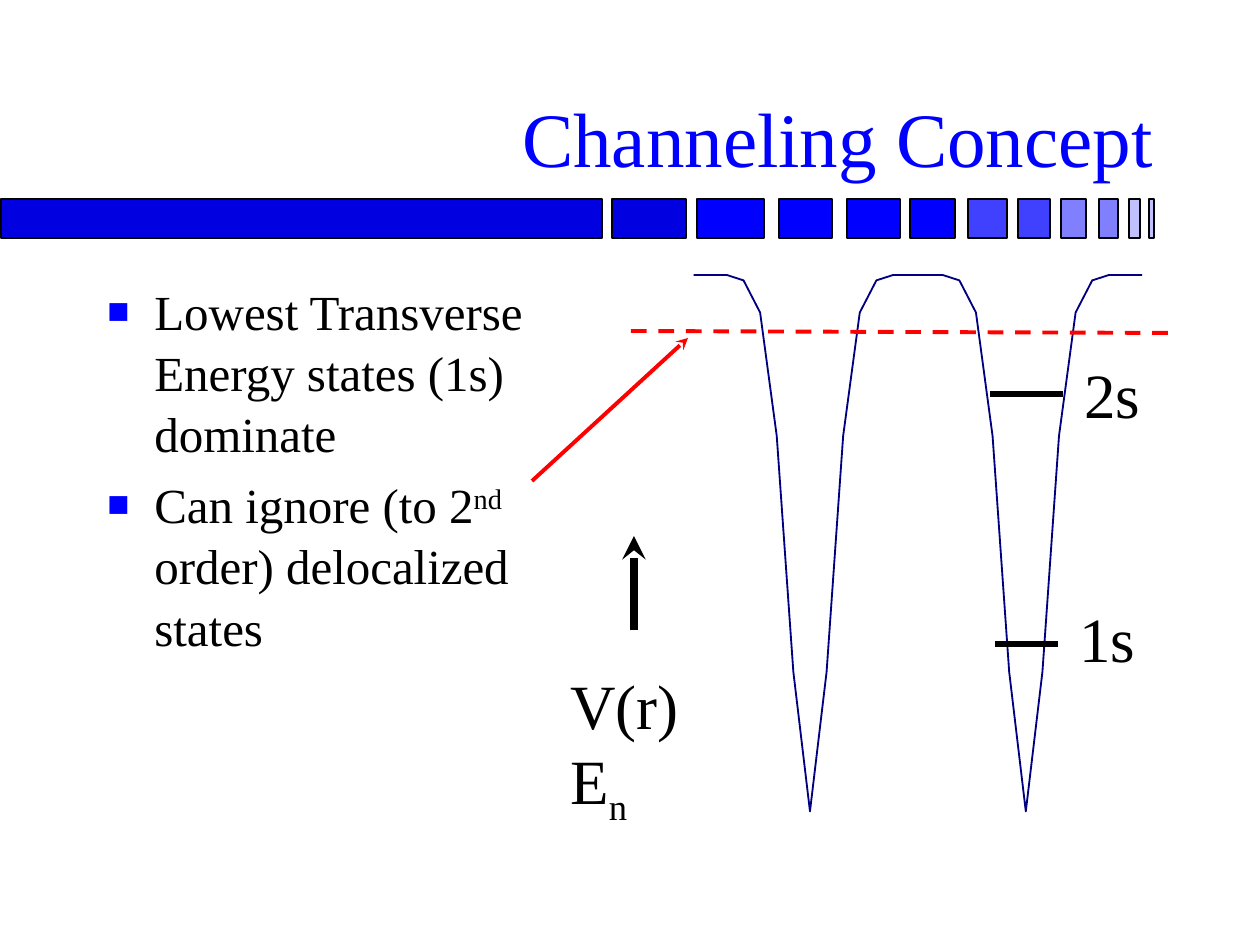
from dataclasses import dataclass

from lxml import etree
from pptx import Presentation
from pptx.chart.data import XyChartData
from pptx.dml.color import RGBColor
from pptx.enum.chart import XL_CHART_TYPE
from pptx.enum.dml import MSO_LINE
from pptx.enum.shapes import MSO_CONNECTOR, MSO_SHAPE
from pptx.enum.text import MSO_ANCHOR, PP_ALIGN
from pptx.oxml.ns import qn
from pptx.util import Emu, Pt

RECTANGLE = MSO_SHAPE.RECTANGLE
STRAIGHT = MSO_CONNECTOR.STRAIGHT
SMOOTH_SCATTER = XL_CHART_TYPE.XY_SCATTER_SMOOTH_NO_MARKERS
DASH = MSO_LINE.DASH
TOP, BOTTOM = MSO_ANCHOR.TOP, MSO_ANCHOR.BOTTOM
LEFT, RIGHT = PP_ALIGN.LEFT, PP_ALIGN.RIGHT
PX = 914400 / 126


@dataclass(frozen=True)
class Theme:
    font: str = "Times New Roman"
    chart_font: str = "Arial"
    title_size: int = 44
    label_size: int = 36
    body_size: int = 28
    chart_size: float = 12.7
    ink: str = "000000"
    accent: str = "0000FF"
    warning: str = "FF0000"
    curve: str = "000080"
    bar_tones: tuple = ("0000E0", "0000FF", "4040FF", "8080FF", "C0C0FF")


def px(value):
    return Emu(round(value * PX))


def rgb(value):
    return RGBColor.from_string(value)


class SlideBuilder:
    def __init__(self, page, theme):
        self.page = page
        self.theme = theme

    def bar(self, left, top, width, height, color):
        box = self.page.shapes.add_shape(RECTANGLE, px(left), px(top), px(width), px(height))
        box.shadow.inherit = False
        box.fill.solid()
        box.fill.fore_color.rgb = rgb(color)
        box.line.color.rgb = rgb(self.theme.ink)
        box.line.width = Pt(1)

    def text(self, left, top, width, height, paragraphs, size, color,
             align=LEFT, anchor=TOP, bullets=False, spacing=None):
        box = self.page.shapes.add_textbox(px(left), px(top), px(width), px(height))
        frame = box.text_frame
        frame.word_wrap = True
        frame.vertical_anchor = anchor
        for index, spans in enumerate(paragraphs):
            para = frame.add_paragraph() if index else frame.paragraphs[0]
            para.alignment = align
            if spacing:
                para.line_spacing = spacing
            if index:
                para.space_before = Pt(size * 0.2)
            if bullets:
                self.bullet(para)
            for words, baseline in spans:
                span = para.add_run()
                span.text = words
                span.font.name = self.theme.font
                span.font.size = Pt(size)
                span.font.color.rgb = rgb(color)
                if baseline:
                    span._r.get_or_add_rPr().set("baseline", str(baseline * 1000))

    def bullet(self, para):
        properties = para._p.get_or_add_pPr()
        properties.set("marL", str(px(47)))
        properties.set("indent", str(-px(47)))
        color = etree.SubElement(properties, qn("a:buClr"))
        etree.SubElement(color, qn("a:srgbClr"), val=self.theme.accent)
        etree.SubElement(properties, qn("a:buSzPct"), val="75000")
        etree.SubElement(properties, qn("a:buFont"), typeface=self.theme.chart_font)
        etree.SubElement(properties, qn("a:buChar"), char="■")

    def line(self, start, end, color, weight, dash=None, arrow=False):
        connector = self.page.shapes.add_connector(
            STRAIGHT, *(px(value) for value in (*start, *end)))
        connector.line.color.rgb = rgb(color)
        connector.line.width = Pt(weight)
        if dash:
            connector.line.dash_style = dash
        if arrow:
            etree.SubElement(connector.line._get_or_add_ln(), qn("a:tailEnd"), type="stealth")
        etree.SubElement(connector._element.spPr, qn("a:effectLst"))

    def curve(self, left, top, width, height, points, x_range, y_range, plot):
        data = XyChartData()
        series_data = data.add_series("Series 1")
        for x, y in points:
            series_data.add_data_point(x, y)
        chart = self.page.shapes.add_chart(
            SMOOTH_SCATTER, px(left), px(top), px(width), px(height), data).chart
        chart.has_title = False
        chart.has_legend = False
        chart.font.name = self.theme.chart_font
        chart.font.size = Pt(self.theme.chart_size)
        chart.font.color.rgb = rgb(self.theme.ink)
        for axis, limits in ((chart.category_axis, x_range), (chart.value_axis, y_range)):
            axis.minimum_scale, axis.maximum_scale = limits
            axis.has_major_gridlines = False
            axis.visible = False
        chart.plots[0].vary_by_categories = False
        series = chart.plots[0].series[0]
        series.smooth = True
        series.format.line.color.rgb = rgb(self.theme.curve)
        series.format.line.width = Pt(1.06)
        self.plot_layout(chart, plot)

    def plot_layout(self, chart, plot):
        area = chart._chartSpace.chart.plotArea
        for old in area.findall(qn("c:layout")):
            area.remove(old)
        layout = etree.Element(qn("c:layout"))
        area.insert(0, layout)
        manual = etree.SubElement(layout, qn("c:manualLayout"))
        settings = [("layoutTarget", "inner"), ("xMode", "edge"), ("yMode", "edge")]
        settings += zip("xywh", plot)
        for tag, value in settings:
            etree.SubElement(manual, qn(f"c:{tag}"), val=str(value))


def main():
    theme = Theme()
    deck = Presentation()
    deck.slide_width, deck.slide_height = px(1260), px(945)
    page = deck.slides.add_slide(deck.slide_layouts[6])
    builder = SlideBuilder(page, theme)

    bars = [(1, 601, 0), (612, 74, 0), (697, 67, 1), (779, 53, 1), (847, 53, 1),
            (910, 45, 1), (968, 39, 2), (1018, 32, 2), (1061, 25, 3),
            (1099, 19, 3), (1129, 11, 4), (1149, 5, 4)]
    for left, width, tone in bars:
        builder.bar(left, 199, width, 39, theme.bar_tones[tone])

    builder.text(95, 26, 1071, 163, [[("Channeling Concept", 0)]],
                 theme.title_size, theme.accent, align=RIGHT, anchor=BOTTOM)
    builder.text(95, 273, 525, 567, [
        [("Lowest Transverse Energy states (1s) dominate", 0)],
        [("Can ignore (to 2", 0), ("nd", 30), (" order) delocalized states", 0)],
    ], theme.body_size, theme.ink, bullets=True, spacing=1.04)

    well = [-1, -7, -30, -74, -100, -74, -30, -7, -1]
    potential = [0] * 3 + well + [0] * 4 + well + [0] * 3
    points = [(round(-1 + step / 10, 1), value) for step, value in enumerate(potential)]
    builder.curve(597, 251, 595, 687, points, (-1.5, 2), (-120, 0),
                  (0.023, 0.035, 0.977, 0.937))

    builder.text(558, 660, 181, 164, [[("V(r) E", 0), ("n", -25)]],
                 theme.label_size, theme.ink)
    builder.line((634, 630), (634, 536), theme.ink, 4.5, arrow=True)
    builder.line((995, 644), (1058, 644), theme.ink, 3)
    builder.line((990, 394), (1063, 394), theme.ink, 3)
    for name, left, top in (("2s", 1072, 349), ("1s", 1067, 593)):
        builder.text(left, top, 106, 88, [[(name, 0)]], theme.label_size, theme.ink)
    builder.line((631, 331), (1172, 333), theme.warning, 2.25, dash=DASH)
    builder.line((532, 481), (688, 338), theme.warning, 2.25, arrow=True)

    deck.save("out.pptx")


if __name__ == "__main__":
    main()
